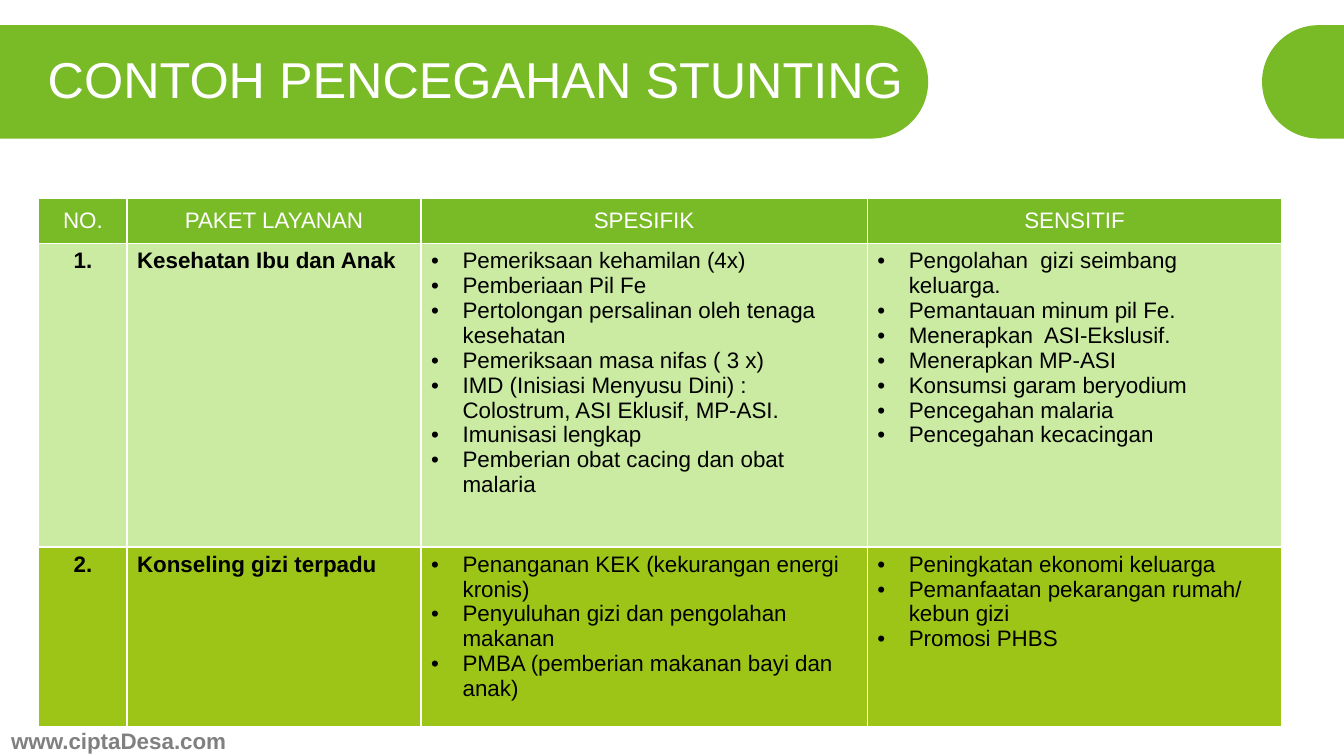
from dataclasses import dataclass
from math import cos, pi, sin

from lxml.etree import SubElement
from pptx import Presentation
from pptx.dml.color import RGBColor
from pptx.enum.text import MSO_ANCHOR as Anchor, PP_ALIGN as Align
from pptx.oxml.ns import qn
from pptx.util import Emu, Pt

PX = 9525
WIDTH, HEIGHT = 1280, 720
FONT = "Arial"
WHITE, BLACK, GREY = "FFFFFF", "000000", "808080"
GREEN, PALE, LIME = "79BA27", "CAEBA1", "9DC518"
BAND_TOP, BAND_RADIUS = 24, 54
BULLET_INDENT = 30
ARC_STEPS = 48
COLUMN_WIDTHS = (84, 280, 425, 395)
HEADINGS = ("NO.", "PAKET LAYANAN", "SPESIFIK", "SENSITIF")


@dataclass(frozen=True)
class Service:
    number: str
    name: str
    specific: tuple[str, ...]
    sensitive: tuple[str, ...]
    fill: str
    height: int


@dataclass(frozen=True)
class Label:
    text: str
    box: tuple[int, int, int, int]
    size: int
    color: str
    bold: bool
    align: Align
    anchor: Anchor
    wrap: bool


SERVICES = (
    Service(
        "1.", "Kesehatan Ibu dan Anak",
        ("Pemeriksaan kehamilan (4x)",
         "Pemberiaan Pil Fe",
         "Pertolongan persalinan oleh tenaga kesehatan",
         "Pemeriksaan masa nifas ( 3 x)",
         "IMD (Inisiasi Menyusu Dini) : Colostrum, ASI Eklusif, MP-ASI.",
         "Imunisasi lengkap",
         "Pemberian obat cacing dan obat malaria"),
        ("Pengolahan  gizi seimbang keluarga.",
         "Pemantauan minum pil Fe.",
         "Menerapkan  ASI-Ekslusif.",
         "Menerapkan MP-ASI",
         "Konsumsi garam beryodium",
         "Pencegahan malaria",
         "Pencegahan kecacingan"),
        PALE, 289),
    Service(
        "2.", "Konseling gizi terpadu",
        ("Penanganan KEK (kekurangan energi kronis)",
         "Penyuluhan gizi dan pengolahan makanan",
         "PMBA (pemberian makanan bayi dan anak)"),
        ("Peningkatan ekonomi keluarga",
         "Pemanfaatan pekarangan rumah/ kebun gizi",
         "Promosi PHBS"),
        LIME, 171),
)
FOOTER = Label("www.ciptaDesa.com", (-1, 688, 228, 35), 16, GREY, True,
               Align.CENTER, Anchor.TOP, False)
TITLE = Label("CONTOH PENCEGAHAN STUNTING", (36, 37, 866, 76), 36, WHITE, False,
              Align.LEFT, Anchor.MIDDLE, True)


def px(n: float) -> Emu:
    return Emu(round(n * PX))


def rgb(color: str) -> RGBColor:
    return RGBColor.from_string(color)


def style_runs(p, size: int, color: str, bold: bool) -> None:
    for r in p.runs:
        r.font.name, r.font.size, r.font.bold = FONT, Pt(size), bold
        r.font.color.rgb = rgb(color)


def add_band(slide, flat_x: int, tip_x: int) -> None:
    """Draw a bar with a straight end at flat_x and a half-round end at tip_x."""
    side = 1 if tip_x > flat_x else -1
    center_x, center_y = tip_x - side * BAND_RADIUS, BAND_TOP + BAND_RADIUS
    angles = [pi * i / ARC_STEPS - pi / 2 for i in range(ARC_STEPS + 1)]
    arc = [(px(center_x + side * BAND_RADIUS * cos(a)),
            px(center_y + BAND_RADIUS * sin(a))) for a in angles]
    builder = slide.shapes.build_freeform(px(flat_x), px(BAND_TOP))
    builder.add_line_segments(arc + [(px(flat_x), px(BAND_TOP + 2 * BAND_RADIUS))])
    sp = builder.convert_to_shape()
    sp.shadow.inherit = False
    sp.fill.solid()
    sp.fill.fore_color.rgb = rgb(GREEN)
    sp.line.fill.background()


def add_label(slide, label: Label) -> None:
    tf = slide.shapes.add_textbox(*map(px, label.box)).text_frame
    tf.word_wrap, tf.vertical_anchor = label.wrap, label.anchor
    p = tf.paragraphs[0]
    p.text, p.alignment = label.text, label.align
    style_runs(p, label.size, label.color, label.bold)


def add_bullet(p) -> None:
    pPr = p._p.get_or_add_pPr()
    pPr.set("marL", str(px(BULLET_INDENT)))
    pPr.set("indent", str(px(-BULLET_INDENT)))
    SubElement(pPr, qn("a:buFont")).set("typeface", FONT)
    SubElement(pPr, qn("a:buChar")).set("char", "•")


def paint_cell(cell, fill: str) -> None:
    tcPr = cell._tc.get_or_add_tcPr()
    for edge in ("lnL", "lnR", "lnT", "lnB"):
        ln = SubElement(tcPr, qn(f"a:{edge}"))
        ln.set("w", str(Pt(1)))
        color = SubElement(SubElement(ln, qn("a:solidFill")), qn("a:srgbClr"))
        color.set("val", WHITE)
    cell.fill.solid()
    cell.fill.fore_color.rgb = rgb(fill)


def fill_cell(cell, lines: tuple[str, ...], fill: str, color: str = BLACK,
              bold: bool = False, align: Align = Align.LEFT,
              bulleted: bool = False) -> None:
    paint_cell(cell, fill)
    tf = cell.text_frame
    tf.text = "\n".join(lines)
    for p in tf.paragraphs:
        if bulleted:
            add_bullet(p)
        p.alignment = align
        style_runs(p, 16, color, bold)


def add_services(slide) -> None:
    heights = (43, *(s.height for s in SERVICES))
    box = (37, 189, sum(COLUMN_WIDTHS), sum(heights))
    table = slide.shapes.add_table(len(heights), len(COLUMN_WIDTHS),
                                   *map(px, box)).table
    table.horz_banding = False
    for column, width in zip(table.columns, COLUMN_WIDTHS):
        column.width = px(width)
    for row, height in zip(table.rows, heights):
        row.height = px(height)
    for i, heading in enumerate(HEADINGS):
        cell = table.cell(0, i)
        fill_cell(cell, (heading,), GREEN, WHITE, align=Align.CENTER)
        cell.vertical_anchor = Anchor.MIDDLE
    for i, s in enumerate(SERVICES, 1):
        fill_cell(table.cell(i, 0), (s.number,), s.fill, bold=True, align=Align.CENTER)
        fill_cell(table.cell(i, 1), (s.name,), s.fill, bold=True)
        fill_cell(table.cell(i, 2), s.specific, s.fill, bulleted=True)
        fill_cell(table.cell(i, 3), s.sensitive, s.fill, bulleted=True)


def main() -> None:
    prs = Presentation()
    prs.slide_width, prs.slide_height = px(WIDTH), px(HEIGHT)
    slide = prs.slides.add_slide(prs.slide_layouts[6])
    add_band(slide, 0, 884)
    add_band(slide, WIDTH, 1202)
    add_label(slide, FOOTER)
    add_services(slide)
    add_label(slide, TITLE)
    prs.save("out.pptx")


if __name__ == "__main__":
    main()
